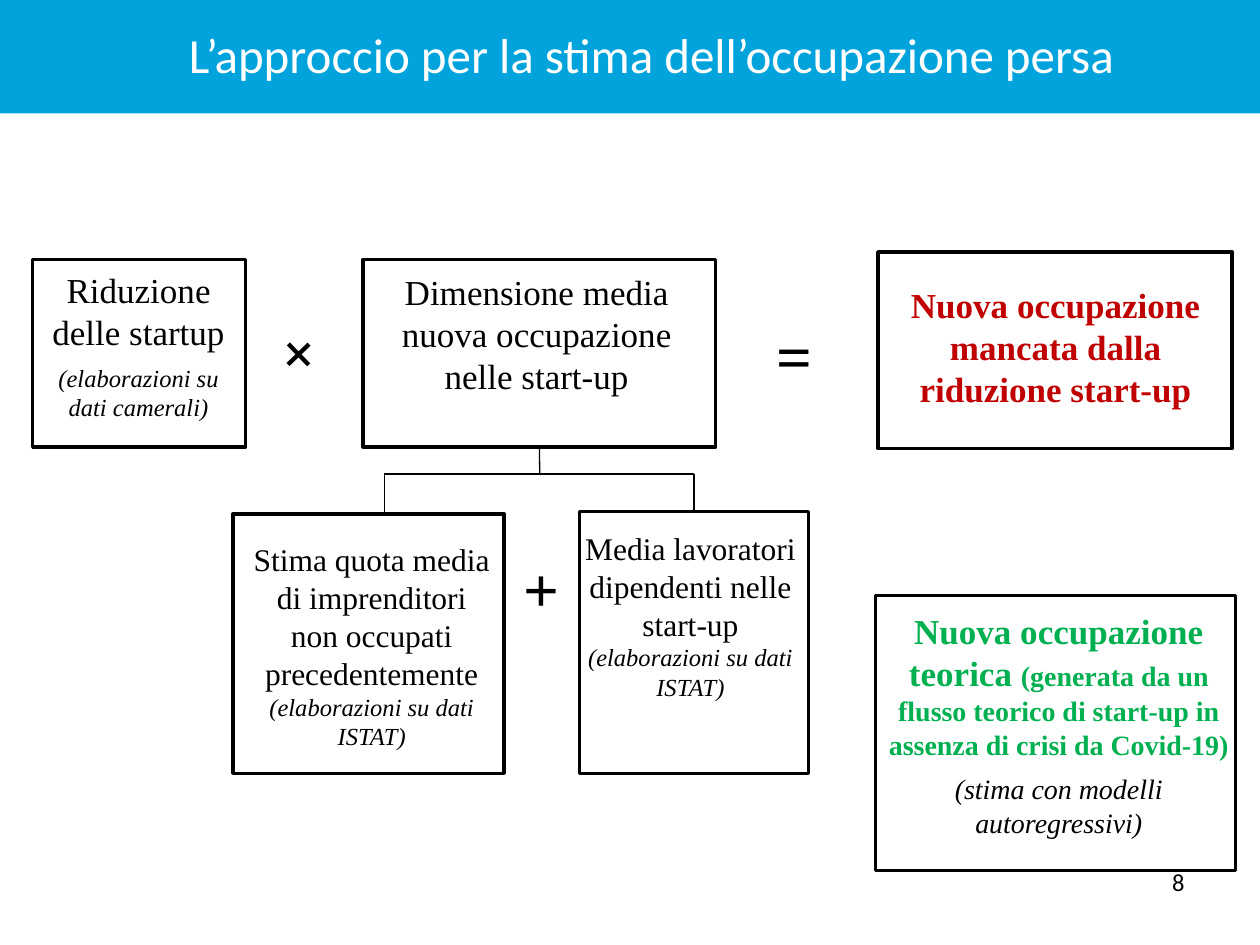
from dataclasses import dataclass

from lxml import etree
from pptx import Presentation
from pptx.dml.color import RGBColor
from pptx.enum.shapes import MSO_CONNECTOR, MSO_SHAPE
from pptx.enum.text import PP_ALIGN
from pptx.oxml.ns import qn
from pptx.util import Cm, Pt

RECTANGLE = MSO_SHAPE.RECTANGLE
STRAIGHT = MSO_CONNECTOR.STRAIGHT
LEFT, CENTER, RIGHT = PP_ALIGN.LEFT, PP_ALIGN.CENTER, PP_ALIGN.RIGHT
TOP_SITE, BOTTOM_SITE = 0, 2


@dataclass(frozen=True)
class Theme:
    """Colours, fonts, type sizes and line widths of the slide."""
    banner: RGBColor = RGBColor(0x00, 0xA3, 0xDC)
    white: RGBColor = RGBColor(0xFF, 0xFF, 0xFF)
    black: RGBColor = RGBColor(0x00, 0x00, 0x00)
    red: RGBColor = RGBColor(0xC0, 0x00, 0x00)
    green: RGBColor = RGBColor(0x00, 0xB0, 0x50)
    heading_font: str = "Calibri"
    body_font: str = "Times New Roman"
    title: int = 28
    operator: int = 36
    large: int = 20
    medium: int = 18
    small: int = 16
    note: int = 14
    border: float = 2
    branch: float = 1
    stem: float = 0.75


THEME = Theme()


def text_run(text, size, color=THEME.black, font=THEME.body_font, bold=False, italic=False):
    """Describe one run of text."""
    return text, size, color, font, bold, italic


def note_run(text, size=THEME.note):
    """Describe an italic source note."""
    return text_run(text, size, italic=True)


def add_rectangle(slide, box, fill=None):
    """Add a filled band, or a black-bordered box when no fill is given."""
    shape = slide.shapes.add_shape(RECTANGLE, *map(Cm, box))
    shape.shadow.inherit = False
    if fill is None:
        shape.fill.background()
        shape.line.color.rgb = THEME.black
        shape.line.width = Pt(THEME.border)
    else:
        shape.fill.solid()
        shape.fill.fore_color.rgb = fill
        shape.line.fill.background()
    return shape


def add_text(slide, box, paragraphs, align=CENTER, space_after=0, wrap=True):
    """Add a text box from paragraphs that are lists of runs."""
    shape = slide.shapes.add_textbox(*map(Cm, box))
    frame = shape.text_frame
    frame.word_wrap = wrap
    for index, runs in enumerate(paragraphs):
        paragraph = frame.add_paragraph() if index else frame.paragraphs[0]
        paragraph.alignment = align
        paragraph.space_after = Pt(space_after)
        for text, size, color, font, bold, italic in runs:
            run = paragraph.add_run()
            run.text = text
            run.font.size = Pt(size)
            run.font.color.rgb = color
            run.font.name = font
            run.font.bold = bold
            run.font.italic = italic
    return shape


def add_box(slide, box, text_area, paragraphs, space_after=0):
    """Add a bordered box with its text on top."""
    shape = add_rectangle(slide, box)
    add_text(slide, text_area, paragraphs, space_after=space_after)
    return shape


def add_operator(slide, symbol, left, top, rotation=0):
    """Add an arithmetic sign between two boxes."""
    runs = [text_run(symbol, THEME.operator, bold=True)]
    shape = add_text(slide, (left, top, 1.45, 1.8), [runs], space_after=6)
    shape.rotation = rotation


def add_line(slide, start, end, width):
    """Add a straight black connector without shadow."""
    connector = slide.shapes.add_connector(STRAIGHT, *map(Cm, start + end))
    connector.line.color.rgb = THEME.black
    connector.line.width = Pt(width)
    etree.SubElement(connector._element.spPr, qn("a:effectLst"))
    return connector


def add_header(slide):
    """Add the banner, the title and the page number."""
    add_rectangle(slide, (0, -0.1, 25.4, 2.39), THEME.banner)
    title = text_run("L’approccio per la stima dell’occupazione persa",
                     THEME.title, THEME.white, THEME.heading_font)
    add_text(slide, (3.56, 0.36, 19.38, 1.45), [[title]], LEFT, wrap=False)
    number = text_run("8", THEME.note, font=THEME.heading_font)
    add_text(slide, (18.21, 17.35, 5.92, 1.32), [[number]], RIGHT)


def add_formula(slide):
    """Add the top row of the formula and return the average size box."""
    add_box(slide, (0.66, 5.23, 4.29, 3.78), (0.66, 5.28, 4.27, 4.62), [
        [text_run("Riduzione delle startup", THEME.large)],
        [note_run("(elaborazioni su dati camerali)")],
    ], 6)
    average = add_box(slide, (7.32, 5.23, 7.11, 3.78), (7.52, 5.33, 6.6, 2.82), [
        [text_run("Dimensione media nuova occupazione nelle start-up", THEME.large)],
    ], 6)
    add_box(slide, (17.7, 5.08, 7.14, 3.96), (17.65, 5.59, 7.26, 2.82), [
        [text_run("Nuova occupazione mancata dalla riduzione start-up",
                  THEME.large, THEME.red, bold=True)],
    ], 6)
    add_operator(slide, "+", 5.36, 6.2, rotation=46)
    add_operator(slide, "=", 15.29, 6.25)
    return average


def add_components(slide, average):
    """Add the two parts of the average size and the bracket above them."""
    source = note_run("(elaborazioni su dati ISTAT)")
    add_box(slide, (4.7, 10.36, 5.46, 5.23), (4.83, 10.77, 5.33, 4.52), [
        [text_run("Stima quota media di imprenditori non occupati precedentemente",
                  THEME.medium)],
        [source],
    ])
    employees = add_box(slide, (11.68, 10.31, 4.62, 5.28), (11.53, 10.54, 4.78, 3.76), [
        [text_run("Media lavoratori dipendenti nelle start-up", THEME.medium)],
        [source],
    ])
    add_operator(slide, "+", 10.19, 10.95)

    left, middle, right, level = 7.75, 10.88, 13.99, 9.55
    add_line(slide, (left, 10.36), (left, level), THEME.branch)
    branch = add_line(slide, (right, 10.31), (right, level), THEME.branch)
    branch.begin_connect(employees, TOP_SITE)
    add_line(slide, (right, level), (left, level), THEME.branch)
    stem = add_line(slide, (middle, level), (middle, 9.01), THEME.stem)
    stem.end_connect(average, BOTTOM_SITE)


def add_theoretical(slide):
    """Add the box on theoretical new employment."""
    add_box(slide, (17.65, 12.01, 7.26, 5.54), (17.42, 12.17, 7.85, 4.93), [
        [text_run("Nuova occupazione teorica ", THEME.large, THEME.green, bold=True),
         text_run("(generata da un flusso teorico di start-up in assenza di crisi da Covid-19)",
                  THEME.small, THEME.green, bold=True)],
        [note_run("(stima con modelli autoregressivi)", THEME.small)],
    ], 6)


def main():
    """Build the slide and save it."""
    presentation = Presentation()
    presentation.slide_width = Cm(25.4)
    presentation.slide_height = Cm(19.05)
    slide = presentation.slides.add_slide(presentation.slide_layouts[6])
    add_header(slide)
    average = add_formula(slide)
    add_components(slide, average)
    add_theoretical(slide)
    presentation.save("out.pptx")


if __name__ == "__main__":
    main()
